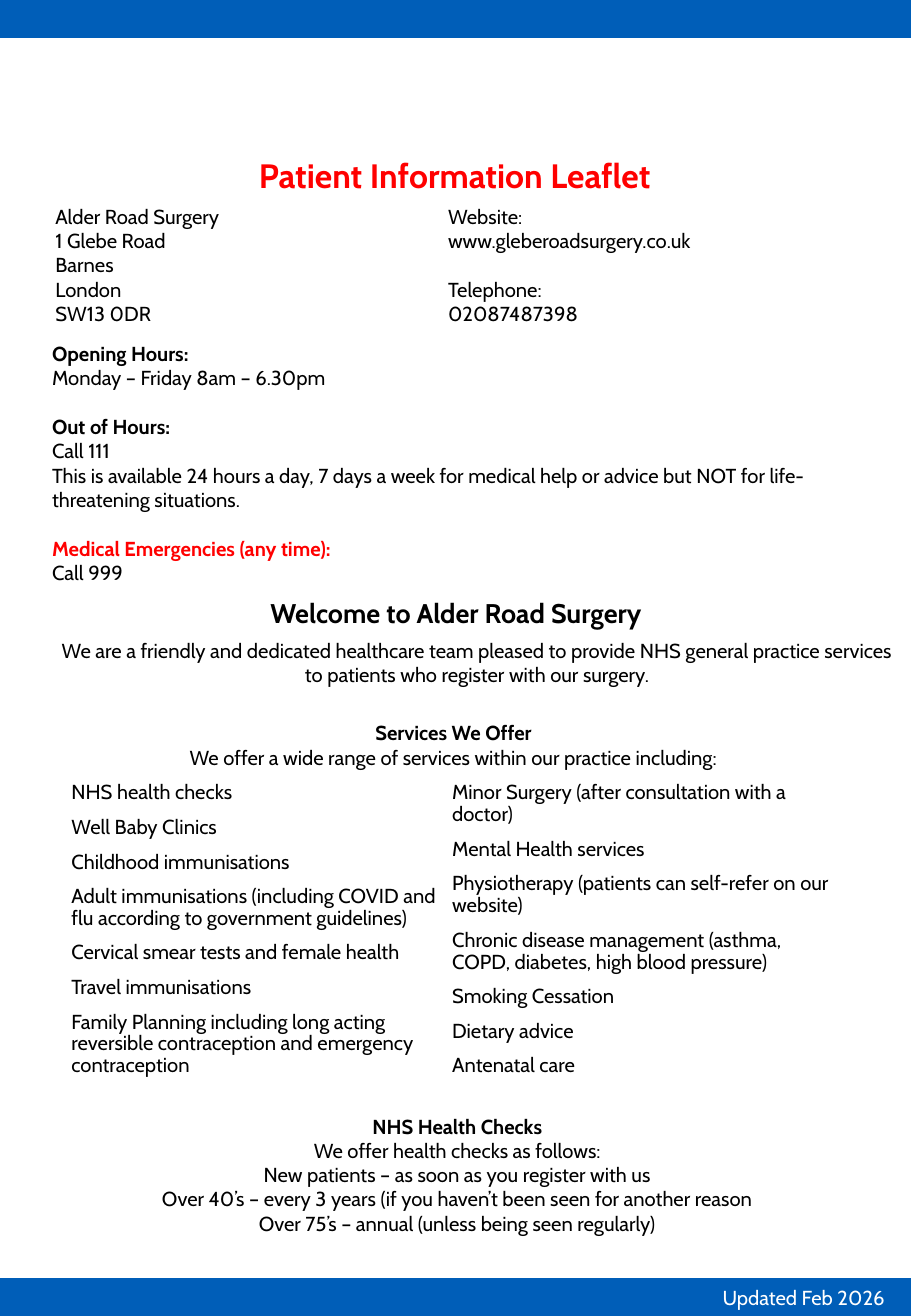
from pptx import Presentation
from pptx.dml.color import RGBColor
from pptx.enum.shapes import MSO_SHAPE
from pptx.enum.text import MSO_ANCHOR, MSO_AUTO_SIZE, PP_ALIGN
from pptx.oxml import parse_xml
from pptx.oxml.ns import nsdecls
from pptx.util import Cm, Pt

RECT = MSO_SHAPE.RECTANGLE
TOP, BOTTOM = MSO_ANCHOR.TOP, MSO_ANCHOR.BOTTOM
LEFT, CENTER = PP_ALIGN.LEFT, PP_ALIGN.CENTER
GROW, FIXED = MSO_AUTO_SIZE.SHAPE_TO_FIT_TEXT, MSO_AUTO_SIZE.NONE

FONT = "Cabin"
BLACK, RED, WHITE, BLUE = "000000", "FF0000", "FFFFFF", "005EB8"
WIDE, HIGH, BAR = 19.05, 27.51, 0.76
GAP = 14.5  # one line of 12 pt text

HOURS = [
    ("Opening Hours:", {"bold": True}),
    "Monday – Friday 8am – 6.30pm",
    ("Out of Hours:", {"bold": True, "before": GAP}),
    "Call 111",
    "This is available 24 hours a day, 7 days a week for medical help or "
    "advice but NOT for life-threatening situations.",
    ("Medical Emergencies (any time):",
     {"bold": True, "color": RED, "before": GAP}),
    "Call 999",
]
CARE = [
    "NHS health checks",
    "Well Baby Clinics",
    "Childhood immunisations",
    "Adult immunisations (including COVID and flu according to government "
    "guidelines)",
    "Cervical smear tests and female health",
    "Travel immunisations",
    "Family Planning including long acting reversible contraception and "
    "emergency contraception",
    "Minor Surgery (after consultation with a doctor)",
    "Mental Health services",
    "Physiotherapy (patients can self-refer on our website)",
    "Chronic disease management (asthma, COPD, diabetes, high blood pressure)",
    "Smoking Cessation",
    "Dietary advice",
    "Antenatal care",
]
CHECKS = [
    ("NHS Health Checks", {"bold": True}),
    "We offer health checks as follows:",
    "New patients – as soon as you register with us",
    "Over 40’s – every 3 years (if you haven’t been seen for another reason",
    "Over 75’s – annual (unless being seen regularly)",
]


def rgb(code):
    return RGBColor.from_string(code)


def add_bar(slide, top):
    bar = slide.shapes.add_shape(RECT, 0, Cm(top), Cm(WIDE), Cm(BAR))
    bar.shadow.inherit = False
    bar.fill.solid()
    bar.fill.fore_color.rgb = rgb(BLUE)
    bar.line.color.rgb = rgb(BLUE)
    bar.line.width = Pt(1.5)


def add_line(para, text, size=12, bold=False, color=BLACK, align=LEFT,
             before=0, pitch=1.0):
    para.alignment = align
    para.space_before = Pt(before)
    para.line_spacing = pitch
    run = para.add_run()
    run.text = text
    run.font.name = FONT
    run.font.size = Pt(size)
    run.font.bold = bold
    run.font.color.rgb = rgb(color)


def fill_text(shape, lines, anchor=TOP, fit=GROW, **style):
    """Write lines, each a string or a (string, own style) pair."""
    frame = shape.text_frame
    frame.word_wrap = True
    frame.auto_size = fit
    frame.vertical_anchor = anchor
    for i, line in enumerate(lines):
        text, own = (line, {}) if isinstance(line, str) else line
        para = frame.add_paragraph() if i else frame.paragraphs[0]
        look = {**style, **own}
        if i == 0:
            look["before"] = 0
        add_line(para, text, **look)


def place(shape, left, top, width, height):
    shape.left, shape.top = Cm(left), Cm(top)
    shape.width, shape.height = Cm(width), Cm(height)


def add_text(slide, area, lines, **style):
    box = slide.shapes.add_textbox(*map(Cm, area))
    fill_text(box, lines, **style)


def fill_list(shape, items):
    """Set a plain list in two columns."""
    fill_text(shape, items, fit=FIXED, before=7.5, pitch=0.9)
    shape.text_frame._txBody.bodyPr.set("numCol", "2")
    for para in shape.text_frame.paragraphs:
        props = para._p.get_or_add_pPr()
        props.set("marL", "0")
        props.set("indent", "0")
        props.append(parse_xml(f"<a:buNone {nsdecls('a')}/>"))


def main():
    deck = Presentation()
    deck.slide_width, deck.slide_height = Cm(WIDE), Cm(HIGH)
    slide = deck.slides.add_slide(deck.slide_layouts[1])
    title, body = slide.placeholders

    for top in (0, HIGH - BAR):
        add_bar(slide, top)

    place(title, 5.16, 3.1, 12.93, 1.12)
    fill_text(title, ["Patient Information Leaflet"], size=20, bold=True,
              color=RED)
    add_text(slide, (0.91, 4.14, 6.4, 2.82),
             ["Alder Road Surgery", "1 Glebe Road", "Barnes", "London",
              "SW13 0DR"])
    add_text(slide, (9.12, 4.14, 9.02, 2.82),
             ["Website:", "www.gleberoadsurgery.co.uk",
              ("Telephone:", {"before": GAP}), "02087487398"])
    add_text(slide, (0.84, 7.01, 17.22, 5.38), HOURS)

    add_text(slide, (1.32, 12.4, 16.43, 0.89),
             ["Welcome to Alder Road Surgery"], anchor=BOTTOM, fit=FIXED,
             size=16, bold=True, align=CENTER, pitch=0.9)
    add_text(slide, (0.91, 13.21, 18.14, 1.8),
             ["We are a friendly and dedicated healthcare team pleased to "
              "provide NHS general practice services to patients who "
              "register with our surgery."], align=CENTER)

    add_text(slide, (0.91, 14.94, 17.15, 1.27),
             [("Services We Offer", {"bold": True}),
              "We offer a wide range of services within our practice "
              "including:"], align=CENTER)
    place(body, 1.24, 16.23, 16.43, 6.58)
    fill_list(body, CARE)
    add_text(slide, (0.99, 23.16, 17.15, 3.33), CHECKS, align=CENTER)

    add_text(slide, (14.86, HIGH - BAR, 4.19, BAR), ["Updated Feb 2026"],
             color=WHITE)
    deck.save("out.pptx")


if __name__ == "__main__":
    main()
